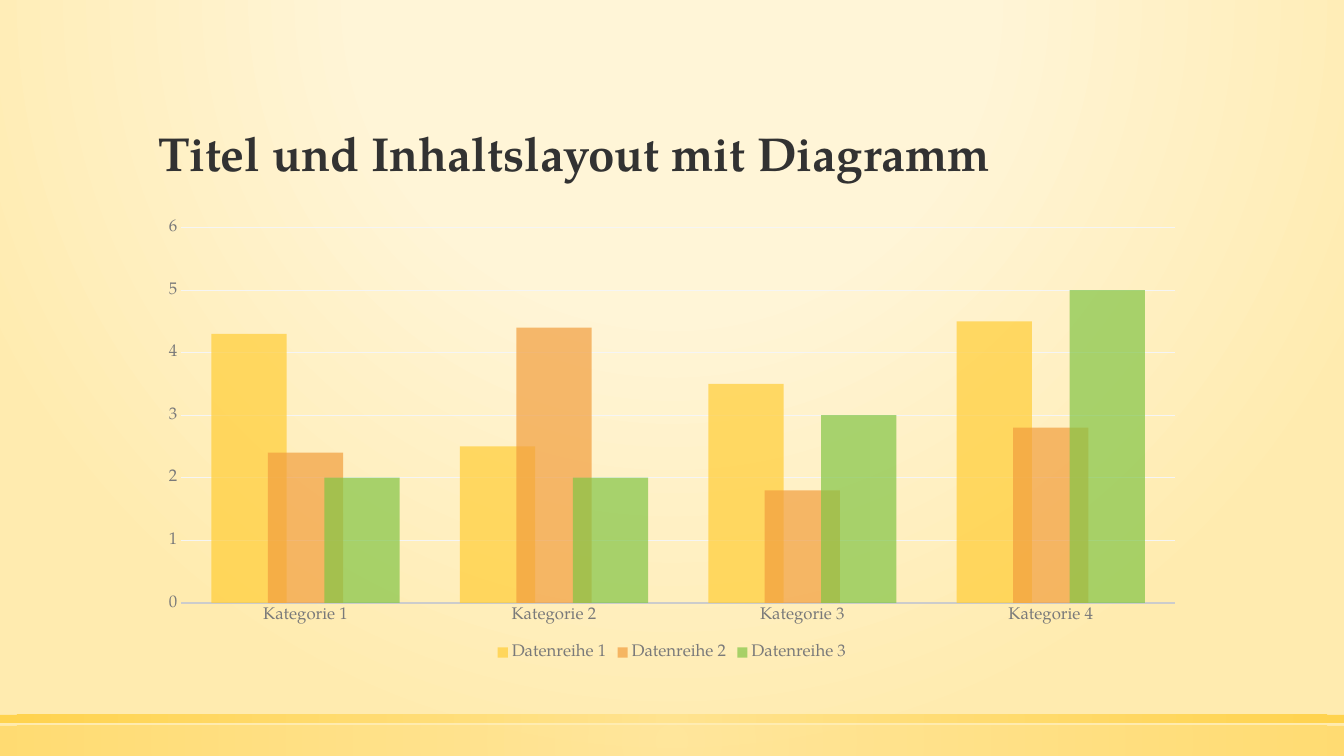
from lxml import etree
from pptx import Presentation
from pptx.chart.data import CategoryChartData
from pptx.dml.color import RGBColor
from pptx.enum.chart import XL_CHART_TYPE, XL_LEGEND_POSITION, XL_TICK_MARK
from pptx.enum.shapes import MSO_SHAPE
from pptx.enum.text import MSO_ANCHOR, MSO_AUTO_SIZE, PP_ALIGN
from pptx.oxml.ns import qn
from pptx.util import Emu, Pt

COLUMNS = XL_CHART_TYPE.COLUMN_CLUSTERED
LEGEND_BOTTOM = XL_LEGEND_POSITION.BOTTOM
NO_TICK = XL_TICK_MARK.NONE
RECTANGLE = MSO_SHAPE.RECTANGLE
BOTTOM = MSO_ANCHOR.BOTTOM
NO_AUTOFIT = MSO_AUTO_SIZE.NONE
LEFT = PP_ALIGN.LEFT

INK = RGBColor(0x32, 0x32, 0x32)
GREY = RGBColor(0x7A, 0x7A, 0x7A)
AXIS = RGBColor(0xCC, 0xCC, 0xCC)
GRID = RGBColor(0xF5, 0xF5, 0xF5)
CREAM = RGBColor(0xFF, 0xF5, 0xD7)
SAND = RGBColor(0xFF, 0xEB, 0xAF)
LIGHT_GOLD = RGBColor(0xFF, 0xE1, 0x86)
GOLD = RGBColor(0xFF, 0xCD, 0x36)
ORANGE = RGBColor(0xF2, 0x9E, 0x3E)
GREEN = RGBColor(0x83, 0xC5, 0x46)

FONT = "TeX Gyre Pagella"
EMU_PER_PX = 914400 / 100.8
WIDTH, HEIGHT = 1344, 756
CONTENT_LEFT, CONTENT_WIDTH = 148, 1048

CATEGORIES = [f"Kategorie {number}" for number in range(1, 5)]
SERIES = [
    ("Datenreihe 1", (4.3, 2.5, 3.5, 4.5), GOLD),
    ("Datenreihe 2", (2.4, 4.4, 1.8, 2.8), ORANGE),
    ("Datenreihe 3", (2, 2, 3, 5), GREEN),
]


def px(length):
    return Emu(round(length * EMU_PER_PX))


def add_alpha(color_element, percent):
    etree.SubElement(color_element, qn("a:alpha"), val=str(percent * 1000))


def make_radial(solid, stops, center):
    """Replace a solidFill element by a circular gradient.

    Stops are (position, colour, opacity) in percent; center is the
    left, top, right and bottom inset of the focus, in percent.
    """
    gradient = etree.Element(qn("a:gradFill"), rotWithShape="1")
    stop_list = etree.SubElement(gradient, qn("a:gsLst"))
    for position, color, opacity in stops:
        stop = etree.SubElement(stop_list, qn("a:gs"), pos=str(position * 1000))
        add_alpha(etree.SubElement(stop, qn("a:srgbClr"), val=str(color)), opacity)
    circle = etree.SubElement(gradient, qn("a:path"), path="circle")
    insets = {side: str(inset * 1000) for side, inset in zip("ltrb", center)}
    etree.SubElement(circle, qn("a:fillToRect"), insets)
    solid.getparent().replace(solid, gradient)


class SlideBuilder:
    def __init__(self, deck):
        self.slide = deck.slides.add_slide(deck.slide_layouts[5])

    def style_font(self, font, size, color, bold=False):
        font.name = FONT
        font.size = Pt(size)
        font.bold = bold
        font.color.rgb = color

    def background(self, stops, center):
        fill = self.slide.background.fill
        fill.solid()
        fill.fore_color.rgb = SAND
        make_radial(self.slide.element.find(f".//{qn('p:bgPr')}/{qn('a:solidFill')}"), stops, center)

    def band(self, top, height, opacity):
        band = self.slide.shapes.add_shape(RECTANGLE, 0, px(top), px(WIDTH), px(height))
        band.shadow.inherit = False
        band.line.fill.background()
        band.fill.solid()
        band.fill.fore_color.rgb = GOLD
        stops = [(0, LIGHT_GOLD, opacity), (100, GOLD, opacity)]
        make_radial(band.element.spPr.find(qn("a:solidFill")), stops, (50, 50, 50, 50))

    def title(self, text, top, height):
        title = self.slide.shapes.title
        title.left, title.top = px(CONTENT_LEFT), px(top)
        title.width, title.height = px(CONTENT_WIDTH), px(height)
        frame = title.text_frame
        frame.text = text
        frame.word_wrap = True
        frame.auto_size = NO_AUTOFIT
        frame.vertical_anchor = BOTTOM
        para = frame.paragraphs[0]
        para.alignment = LEFT
        para.line_spacing = 0.9
        self.style_font(para.font, 34, INK, bold=True)

    def style_axis(self, axis):
        axis.major_tick_mark = axis.minor_tick_mark = NO_TICK
        self.style_font(axis.tick_labels.font, 12, GREY)

    def column_chart(self, top, height):
        data = CategoryChartData()
        data.categories = CATEGORIES
        for name, values, _ in SERIES:
            data.add_series(name, values)
        chart = self.slide.shapes.add_chart(
            COLUMNS, px(CONTENT_LEFT), px(top), px(CONTENT_WIDTH), px(height), data
        ).chart
        chart.has_title = False
        self.style_font(chart.font, 10, INK)

        chart.has_legend = True
        chart.legend.position = LEGEND_BOTTOM
        chart.legend.include_in_layout = False
        self.style_font(chart.legend.font, 12, GREY)

        category_axis, value_axis = chart.category_axis, chart.value_axis
        self.style_axis(category_axis)
        category_axis.format.line.color.rgb = AXIS
        category_axis.format.line.width = Pt(1.25)
        self.style_axis(value_axis)
        value_axis.minimum_scale, value_axis.maximum_scale = 0, 6
        value_axis.major_unit = 1
        value_axis.format.line.fill.background()
        grid_line = value_axis.major_gridlines.format.line
        grid_line.color.rgb = GRID
        grid_line.width = Pt(0.75)

        plot = chart.plots[0]
        plot.vary_by_categories = False
        plot.gap_width = 80
        plot.overlap = 25
        for series, (_, _, color) in zip(plot.series, SERIES):
            series.invert_if_negative = False
            series.format.fill.solid()
            series.format.fill.fore_color.rgb = color
            series.format.line.fill.background()
            fill_color = f"{qn('c:spPr')}/{qn('a:solidFill')}/{qn('a:srgbClr')}"
            add_alpha(series.format.fill and series._element.find(fill_color), 70)


def main():
    deck = Presentation()
    deck.slide_width, deck.slide_height = px(WIDTH), px(HEIGHT)
    builder = SlideBuilder(deck)
    builder.background(
        [(0, CREAM, 59), (40, CREAM, 66), (100, SAND, 100)], (50, -80, 50, 180)
    )
    builder.band(top=726, height=30, opacity=50)
    builder.band(top=715, height=8, opacity=80)
    builder.title("Titel und Inhaltslayout mit Diagramm", top=51, height=136)
    builder.column_chart(top=210, height=455)
    deck.save("out.pptx")


if __name__ == "__main__":
    main()
